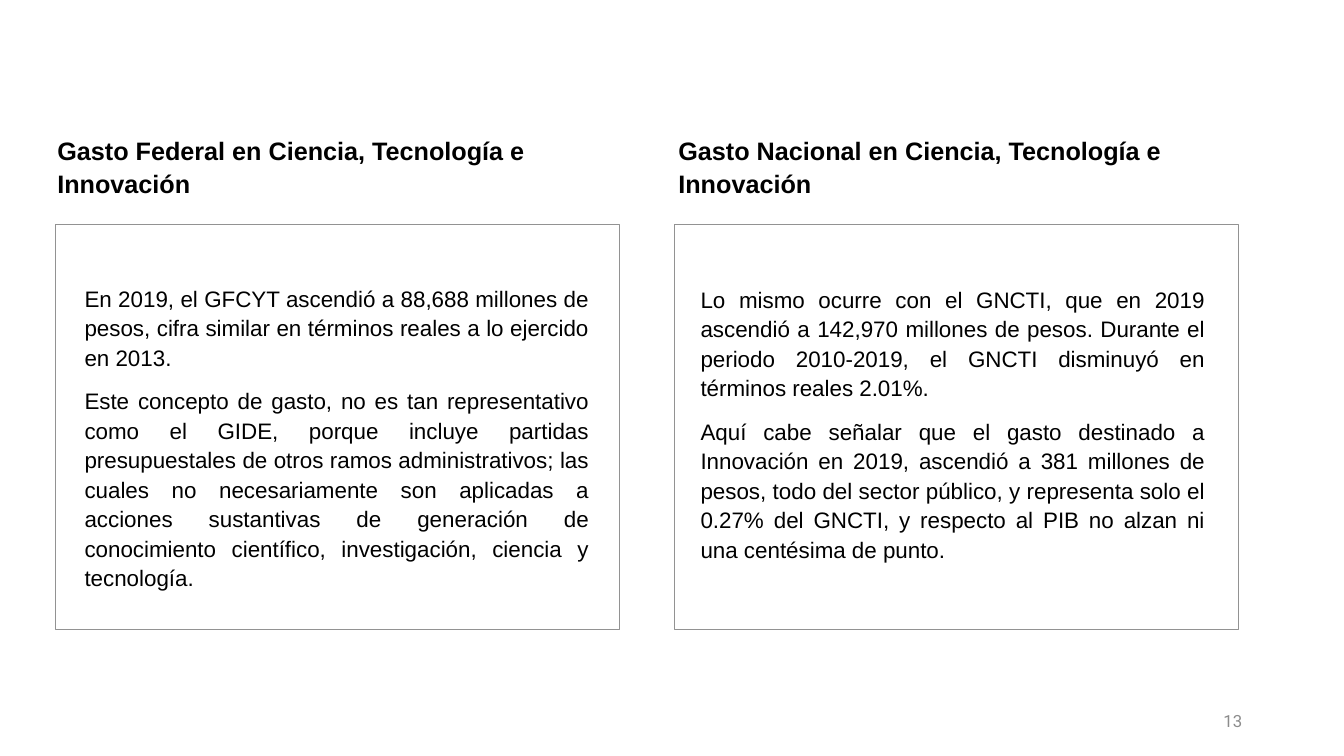
from pptx import Presentation
from pptx.dml.color import RGBColor
from pptx.enum.shapes import MSO_SHAPE
from pptx.enum.text import MSO_ANCHOR, PP_ALIGN
from pptx.util import Inches, Pt

BLACK = RGBColor(0x00, 0x00, 0x00)
FRAME_GRAY = RGBColor(0x92, 0x92, 0x92)
NUMBER_GRAY = RGBColor(0x8C, 0x8C, 0x8C)

PAGE_NUMBER = "13"
COLUMNS = [
    {
        "heading": "Gasto Federal en Ciencia, Tecnología e Innovación",
        "body": [
            "En 2019, el GFCYT ascendió a 88,688 millones de pesos, cifra similar en "
            "términos reales a lo ejercido en 2013.",
            "Este concepto de gasto, no es tan representativo como el GIDE, porque "
            "incluye partidas presupuestales de otros ramos administrativos; las cuales "
            "no necesariamente son aplicadas a acciones sustantivas de generación de "
            "conocimiento científico, investigación, ciencia y tecnología.",
        ],
        "frame_left": 0.55, "heading_left": 0.47, "body_left": 0.74, "body_top": 2.75,
    },
    {
        "heading": "Gasto Nacional en Ciencia, Tecnología e Innovación",
        "body": [
            "Lo mismo ocurre con el GNCTI, que en 2019 ascendió a 142,970 millones de "
            "pesos. Durante el periodo 2010-2019, el GNCTI disminuyó en términos reales "
            "2.01%.",
            "Aquí cabe señalar que el gasto destinado a Innovación en 2019, ascendió a "
            "381 millones de pesos, todo del sector público, y representa solo el 0.27% "
            "del GNCTI, y respecto al PIB no alzan ni una centésima de punto.",
        ],
        "frame_left": 6.69, "heading_left": 6.63, "body_left": 6.85, "body_top": 2.76,
    },
]

FRAME_TOP, FRAME_WIDTH, FRAME_HEIGHT = 2.22, 5.59, 4.02
HEADING_TOP, HEADING_WIDTH, HEADING_HEIGHT = 1.26, 5.65, 0.72
BODY_WIDTH, BODY_HEIGHT = 5.2, 3.2

SPACING = {"line_spacing": 1.1, "space_before": Pt(10)}
HEADING_PARAGRAPH = {**SPACING, "alignment": PP_ALIGN.LEFT}
BODY_PARAGRAPH = {**SPACING, "alignment": PP_ALIGN.JUSTIFY}
NUMBER_PARAGRAPH = {"alignment": PP_ALIGN.RIGHT}
HEADING_FONT = {"name": "Arial", "size": Pt(18), "bold": True}
BODY_FONT = {"name": "Arial", "size": Pt(16)}
NUMBER_FONT = {"name": "Roboto", "size": Pt(12)}


def apply_format(target, values):
    for attribute, value in values.items():
        setattr(target, attribute, value)


def add_text(slide, box, lines, paragraph_format, font_format, color=BLACK,
             anchor=MSO_ANCHOR.TOP):
    frame = slide.shapes.add_textbox(*map(Inches, box)).text_frame
    apply_format(frame, {"word_wrap": True, "vertical_anchor": anchor})
    frame.text = "\n".join(lines)
    for paragraph in frame.paragraphs:
        apply_format(paragraph, paragraph_format)
        for run in paragraph.runs:
            apply_format(run.font, font_format)
            run.font.color.rgb = color


def add_column(slide, column):
    frame_box = (column["frame_left"], FRAME_TOP, FRAME_WIDTH, FRAME_HEIGHT)
    frame = slide.shapes.add_shape(MSO_SHAPE.RECTANGLE, *map(Inches, frame_box))
    frame.shadow.inherit = False
    frame.fill.background()
    frame.line.color.rgb = FRAME_GRAY
    frame.line.width = Pt(0.25)

    heading_box = (column["heading_left"], HEADING_TOP, HEADING_WIDTH, HEADING_HEIGHT)
    add_text(slide, heading_box, [column["heading"]], HEADING_PARAGRAPH, HEADING_FONT)
    body_box = (column["body_left"], column["body_top"], BODY_WIDTH, BODY_HEIGHT)
    add_text(slide, body_box, column["body"], BODY_PARAGRAPH, BODY_FONT)


def main():
    deck = Presentation()
    apply_format(deck, {"slide_width": Inches(13.33), "slide_height": Inches(7.5)})
    slide = deck.slides.add_slide(deck.slide_layouts[6])
    for column in COLUMNS:
        add_column(slide, column)
    add_text(slide, (9.42, 6.95, 3, 0.4), [PAGE_NUMBER], NUMBER_PARAGRAPH,
             NUMBER_FONT, NUMBER_GRAY, MSO_ANCHOR.MIDDLE)
    deck.save("out.pptx")


if __name__ == "__main__":
    main()
